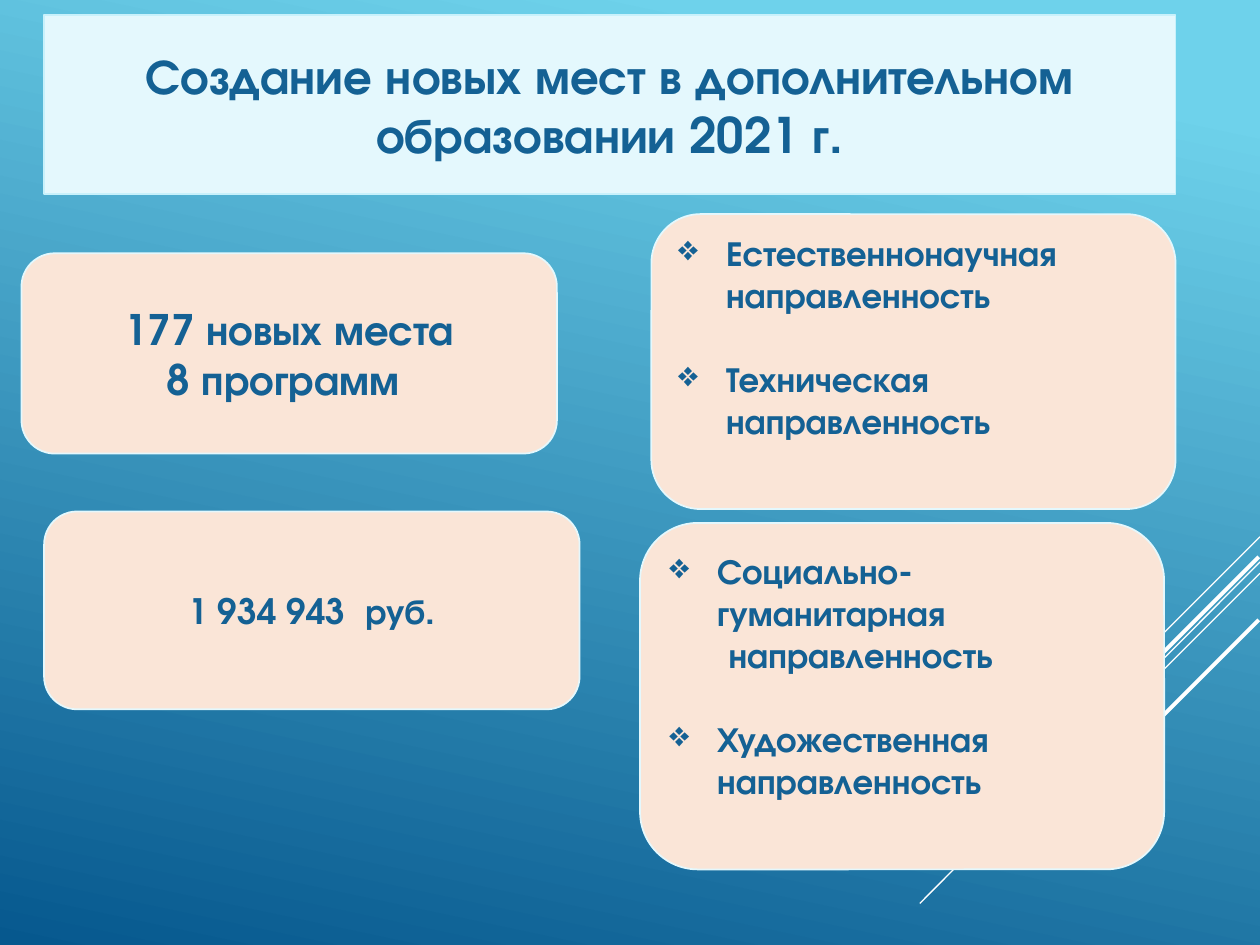
"""Build a slide about new places in supplementary education."""
from dataclasses import dataclass

from lxml.etree import SubElement
from pptx import Presentation
from pptx.dml.color import RGBColor
from pptx.enum.shapes import MSO_CONNECTOR, MSO_SHAPE
from pptx.enum.text import MSO_ANCHOR, MSO_AUTO_SIZE, PP_ALIGN
from pptx.oxml.ns import qn
from pptx.util import Inches, Pt

SKY = RGBColor(0x6E, 0xD2, 0xEB)
OCEAN = RGBColor(0x06, 0x58, 0x8E)
WHITE = RGBColor(0xFF, 0xFF, 0xFF)
ICE = RGBColor(0xE4, 0xF8, 0xFD)
ICE_EDGE = RGBColor(0xC8, 0xF1, 0xFB)
PEACH = RGBColor(0xFA, 0xE5, 0xD7)
INK = RGBColor(0x14, 0x61, 0x94)

FONT = "TeX Gyre Adventor"
CELL = Inches(0.1)
HANGING = Inches(0.38)


@dataclass(frozen=True)
class Area:
    """Place on a grid of 100 columns and 75 rows."""
    column: float
    row: float
    columns: float
    rows: float

    def place(self, shape) -> None:
        """Move and size a shape to this area."""
        measures = {"left": self.column, "top": self.row,
                    "width": self.columns, "height": self.rows}
        for name, cells in measures.items():
            setattr(shape, name, round(cells * CELL))


@dataclass(frozen=True)
class Line:
    """One paragraph of a card."""
    text: str
    bullet: str = ""
    indent: float = 0
    gap: float = 0


@dataclass(frozen=True)
class Card:
    """A rounded box with its paragraphs."""
    area: Area
    lines: tuple[Line, ...]
    size: float
    alignment: PP_ALIGN = PP_ALIGN.CENTER
    bottom_rows: float = 0.5
    fill: RGBColor = PEACH
    edge: RGBColor = ICE


@dataclass(frozen=True)
class Ray:
    """A diagonal decorative line in grid cells."""
    start: tuple[float, float]
    end: tuple[float, float]
    weight: float = 0.75


RAYS = (
    Ray((100, 42.6), (91.7, 50.9)),
    Ray((100, 44.6), (73, 71.7)),
    Ray((100, 45.5), (82.8, 62.7)),
    Ray((99.9, 44.2), (84.2, 59.9), 2.25),
    Ray((99.9, 49.2), (88.5, 60.6), 2.25),
)

TITLE = Card(Area(3.5, 1.2, 89.8, 14.2),
             (Line("Создание новых мест в дополнительном образовании 2021 г."),),
             28, fill=ICE, edge=ICE_EDGE)

CARDS = (
    Card(Area(1.7, 20.1, 42.5, 15.9),
         (Line("177 новых места"), Line("8 программ ")), 24),
    Card(Area(3.5, 40.6, 42.5, 15.7), (Line("1 934 943  руб."),), 20),
    Card(Area(51.7, 17, 41.6, 23.4),
         (Line("Естественнонаучная направленность", "❖"),
          Line("Техническая направленность", "❖", gap=24)),
         20, PP_ALIGN.LEFT, 4.5),
    Card(Area(50.8, 41.5, 41.6, 27.5),
         (Line("Социально-гуманитарная", "❖"),
          Line("направленность", indent=0.47),
          Line("Художественная направленность", "❖", gap=24)),
         20, PP_ALIGN.LEFT, 3.8),
)


def paint_background(slide) -> None:
    """Fill the slide with the blue gradient."""
    fill = slide.background.fill
    fill.gradient()
    fill.gradient_angle = 258
    for stop, color, position in zip(fill.gradient_stops, (SKY, OCEAN), (0.1, 1)):
        stop.color.rgb = color
        stop.position = position


def draw_ray(slide, ray: Ray) -> None:
    """Draw a white line without a shadow."""
    ends = (round(cells * CELL) for cells in ray.start + ray.end)
    connector = slide.shapes.add_connector(MSO_CONNECTOR.STRAIGHT, *ends)
    connector.line.color.rgb = WHITE
    connector.line.width = Pt(ray.weight)
    SubElement(connector._element.spPr, qn("a:effectLst"))


def write_line(paragraph, line: Line, card: Card) -> None:
    """Write one paragraph with its bullet or indent."""
    paragraph.alignment = card.alignment
    paragraph.space_before = Pt(line.gap)
    run = paragraph.add_run()
    run.text = line.text
    formats = {"name": FONT, "size": Pt(card.size), "bold": True}
    for name, value in formats.items():
        setattr(run.font, name, value)
    run.font.color.rgb = INK
    properties = paragraph._p.get_or_add_pPr()
    if line.bullet:
        properties.set("marL", str(HANGING))
        properties.set("indent", str(-HANGING))
        SubElement(properties, qn("a:buChar"), char=line.bullet)
    elif line.indent:
        properties.set("marL", str(Inches(line.indent)))


def format_card(shape, card: Card) -> None:
    """Style a rounded box and write its text."""
    shape.fill.solid()
    shape.fill.fore_color.rgb = card.fill
    shape.line.color.rgb = card.edge
    shape.line.width = Pt(1)
    frame = shape.text_frame
    formats = {"word_wrap": True, "auto_size": MSO_AUTO_SIZE.NONE,
               "vertical_anchor": MSO_ANCHOR.MIDDLE,
               "margin_bottom": round(card.bottom_rows * CELL)}
    for name, value in formats.items():
        setattr(frame, name, value)
    for index, line in enumerate(card.lines):
        paragraph = frame.add_paragraph() if index else frame.paragraphs[0]
        write_line(paragraph, line, card)


def draw_title(slide, card: Card) -> None:
    """Turn the title placeholder into a rounded box."""
    title = slide.shapes.title
    card.area.place(title)
    geometry = SubElement(title._element.spPr, qn("a:prstGeom"), prst="roundRect")
    SubElement(geometry, qn("a:avLst"))
    format_card(title, card)


def draw_card(slide, card: Card) -> None:
    """Add a rounded box to the slide."""
    shape = slide.shapes.add_shape(MSO_SHAPE.ROUNDED_RECTANGLE, 0, 0, CELL, CELL)
    shape.shadow.inherit = False
    card.area.place(shape)
    format_card(shape, card)


def main() -> None:
    """Build and save the presentation."""
    presentation = Presentation()
    presentation.slide_width = 100 * CELL
    presentation.slide_height = 75 * CELL
    slide = presentation.slides.add_slide(presentation.slide_layouts[5])
    paint_background(slide)
    for ray in RAYS:
        draw_ray(slide, ray)
    draw_title(slide, TITLE)
    for card in CARDS:
        draw_card(slide, card)
    presentation.save("out.pptx")


if __name__ == "__main__":
    main()
